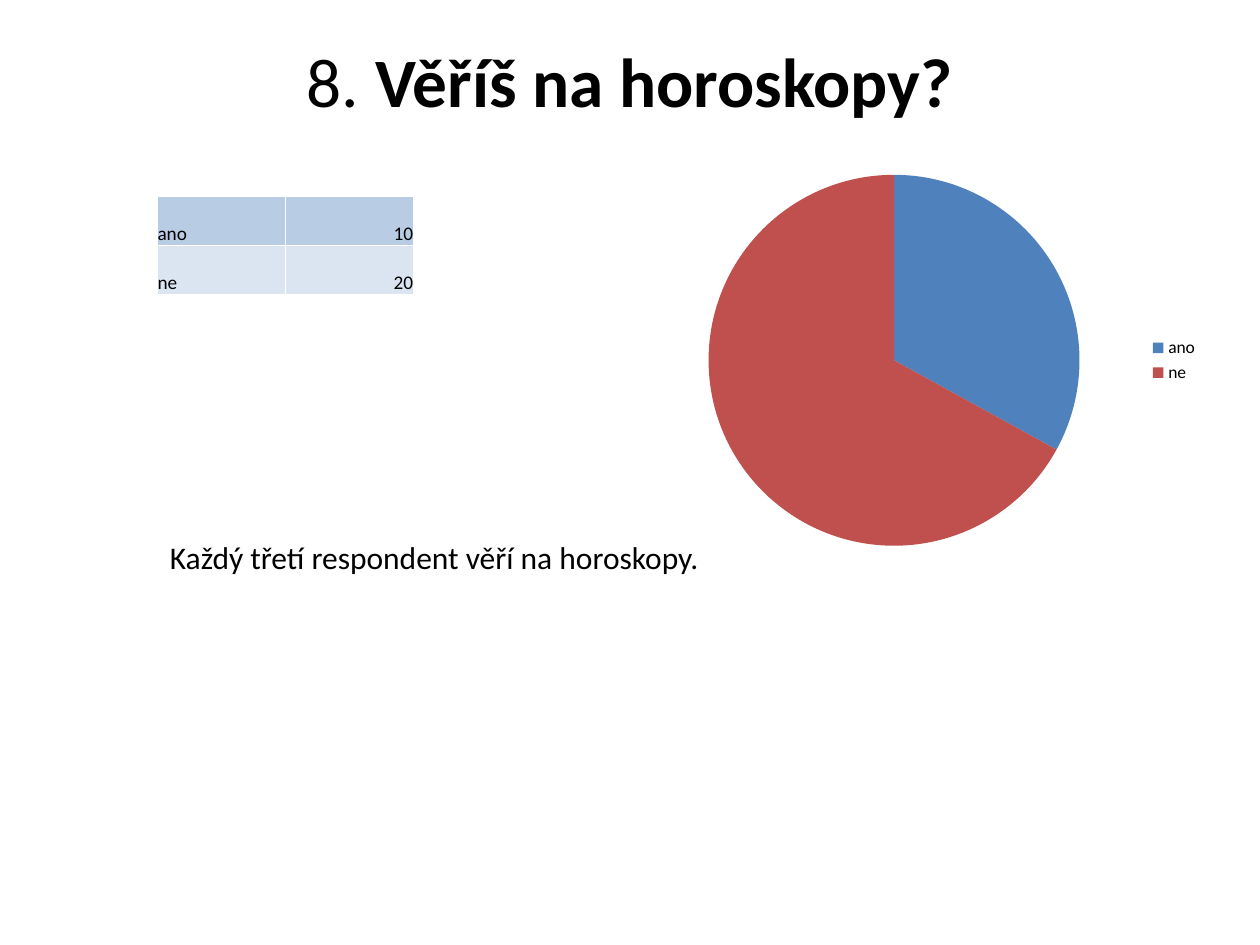
from lxml import etree
from pptx import Presentation
from pptx.chart.data import CategoryChartData
from pptx.dml.color import RGBColor
from pptx.enum.chart import XL_CHART_TYPE as CT, XL_LEGEND_POSITION as LP
from pptx.enum.text import MSO_ANCHOR as MA, PP_ALIGN as PA
from pptx.oxml import parse_xml
from pptx.oxml.ns import nsdecls, qn
from pptx.util import Inches, Pt

FONT = "Calibri"
BLACK = "000000"
WHITE = "FFFFFF"


def rgb(value):
    return RGBColor.from_string(value)


def write(tf, runs, size=18, align=PA.LEFT):
    p = tf.paragraphs[0]
    p.alignment = align
    for text, bold in runs:
        r = p.add_run()
        r.text = text
        r.font.name = FONT
        r.font.size = Pt(size)
        r.font.bold = bold
        r.font.color.rgb = rgb(BLACK)


def add_text(s, box, runs, inset=0.1, **fmt):
    tf = s.shapes.add_textbox(*map(Inches, box)).text_frame
    tf.word_wrap = True
    tf.margin_left = tf.margin_right = Inches(inset)
    tf.margin_top = tf.margin_bottom = Inches(inset / 2)
    write(tf, runs, **fmt)


def add_borders(cell, color, width):
    tc_pr = cell._tc.get_or_add_tcPr()
    for i, side in enumerate(("lnL", "lnR", "lnT", "lnB")):
        ln = etree.Element(qn(f"a:{side}"), w=str(Pt(width)))
        fill = etree.SubElement(ln, qn("a:solidFill"))
        etree.SubElement(fill, qn("a:srgbClr"), val=color)
        tc_pr.insert(i, ln)


def add_answer_table(s, box, rows, fills):
    table = s.shapes.add_table(len(rows), 2, *map(Inches, box)).table
    table.first_row = table.horz_banding = False
    for i, (row, color) in enumerate(zip(rows, fills)):
        for j, (text, align) in enumerate(zip(row, (PA.LEFT, PA.RIGHT))):
            cell = table.cell(i, j)
            cell.margin_left = cell.margin_right = 0
            cell.margin_top = cell.margin_bottom = 0
            cell.vertical_anchor = MA.BOTTOM
            cell.fill.solid()
            cell.fill.fore_color.rgb = rgb(color)
            add_borders(cell, WHITE, 0.5)
            write(cell.text_frame, [(text, False)], size=11, align=align)


def set_plot_layout(chart, x, y, w, h):
    area = chart._chartSpace.chart.plotArea
    for old in area.findall(qn("c:layout")):
        area.remove(old)
    area.insert(0, parse_xml(
        f'<c:layout {nsdecls("c")}><c:manualLayout><c:layoutTarget val="inner"/>'
        '<c:xMode val="edge"/><c:yMode val="edge"/>'
        f'<c:x val="{x}"/><c:y val="{y}"/><c:w val="{w}"/><c:h val="{h}"/>'
        '</c:manualLayout></c:layout>'))


def add_answer_pie(s, box, cats, vals, colors):
    data = CategoryChartData()
    data.categories = cats
    data.add_series("Series 1", vals)
    chart = s.shapes.add_chart(CT.PIE, *map(Inches, box), data).chart
    chart.has_title = False
    chart.font.name = FONT
    chart.font.size = Pt(10)
    chart.font.color.rgb = rgb(BLACK)
    chart.has_legend = True
    chart.legend.position = LP.RIGHT
    chart.legend.include_in_layout = False
    plot = chart.plots[0]
    plot.vary_by_categories = True
    for i, color in enumerate(colors):
        fill = plot.series[0].points[i].format.fill
        fill.solid()
        fill.fore_color.rgb = rgb(color)
    set_plot_layout(chart, 0.12, 0.04, 0.65, 0.92)


def main():
    prs = Presentation()
    prs.slide_width, prs.slide_height = Inches(10), Inches(7.5)
    s = prs.slides.add_slide(prs.slide_layouts[6])
    add_text(s, (0.5, 0.3, 9, 1.25),
             [("8. ", False), ("Věříš na horoskopy?", True)],
             inset=0, size=39.6, align=PA.CENTER)
    add_answer_table(s, (1.25, 1.56, 2.03, 0.78),
                     [("ano", "10"), ("ne", "20")], ("B8CCE4", "DBE5F1"))
    add_answer_pie(s, (5.08, 1.25, 4.53, 3.22),
                   ("ano", "ne"), (33, 67), ("4F81BD", "C0504D"))
    add_text(s, (1.25, 4.22, 4.77, 0.4),
             [("Každý třetí respondent věří na horoskopy.", False)])
    prs.save("out.pptx")


if __name__ == "__main__":
    main()
